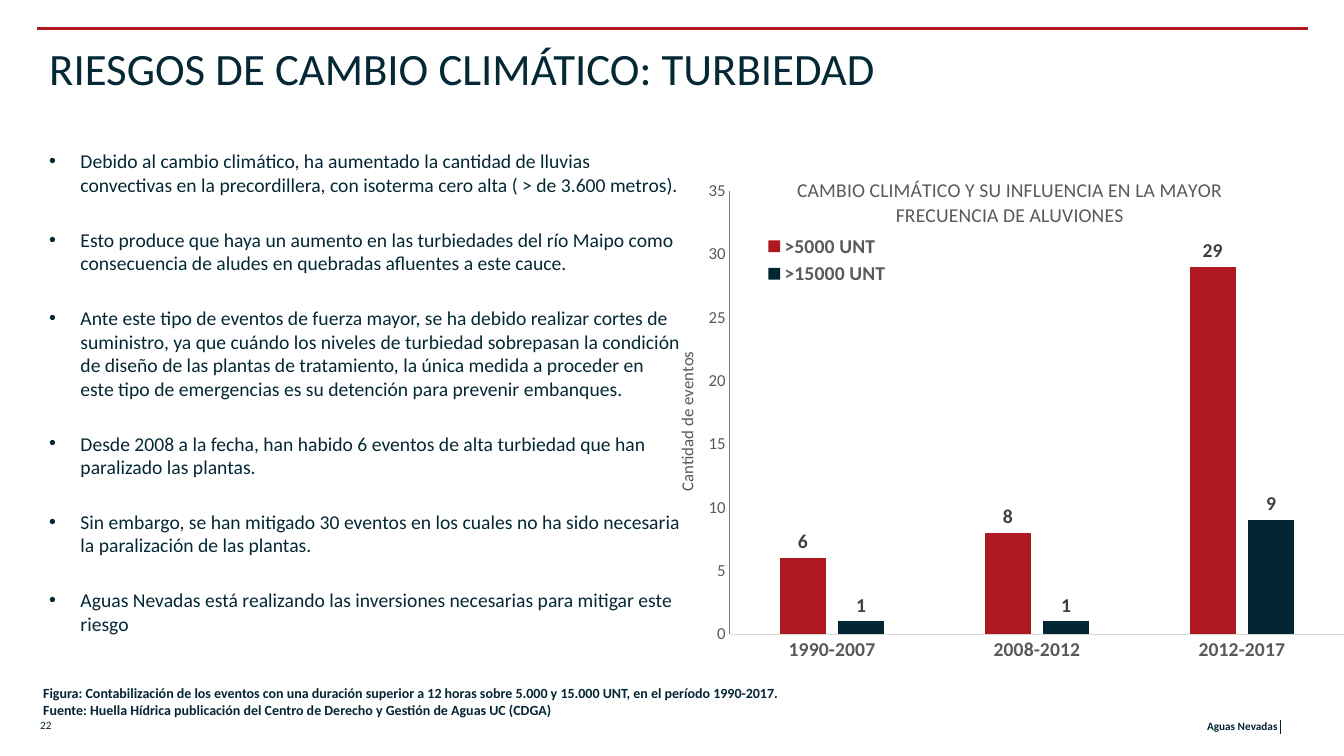
from lxml import etree
from pptx import Presentation
from pptx.chart.data import CategoryChartData
from pptx.dml.color import RGBColor
from pptx.enum.chart import XL_CHART_TYPE, XL_LABEL_POSITION, XL_LEGEND_POSITION, XL_TICK_MARK
from pptx.enum.shapes import MSO_CONNECTOR
from pptx.enum.text import MSO_ANCHOR, PP_ALIGN
from pptx.oxml.ns import qn
from pptx.util import Inches, Pt

COLUMNS = XL_CHART_TYPE.COLUMN_CLUSTERED
OUTSIDE_END = XL_LABEL_POSITION.OUTSIDE_END
LEGEND_BOTTOM = XL_LEGEND_POSITION.BOTTOM
NO_TICK = XL_TICK_MARK.NONE
STRAIGHT = MSO_CONNECTOR.STRAIGHT
TOP, MIDDLE = MSO_ANCHOR.TOP, MSO_ANCHOR.MIDDLE
LEFT, RIGHT = PP_ALIGN.LEFT, PP_ALIGN.RIGHT

# Content
FONT = "Calibri"
COLORS = {"ink": "042834", "navy": "042534", "red": "AE1920", "gray": "595959",
          "label": "404040", "baseline": "D9D9D9", "axis": "808080"}
TITLE = "RIESGOS DE CAMBIO CLIMÁTICO: TURBIEDAD"
BULLETS = [
    "Debido al cambio climático, ha aumentado la cantidad de lluvias convectivas en la "
    "precordillera, con isoterma cero alta ( > de 3.600 metros).",
    "Esto produce que haya un aumento en las turbiedades del río Maipo como consecuencia "
    "de aludes en quebradas afluentes a este cauce.",
    "Ante este tipo de eventos de fuerza mayor, se ha debido realizar cortes de suministro, "
    "ya que cuándo los niveles de turbiedad sobrepasan la condición de diseño de las plantas "
    "de tratamiento, la única medida a proceder en este tipo de emergencias es su detención "
    "para prevenir embanques.",
    "Desde 2008 a la fecha, han habido 6 eventos de alta turbiedad que han paralizado las plantas.",
    "Sin embargo, se han mitigado 30 eventos en los cuales no ha sido necesaria la "
    "paralización de las plantas.",
    "Aguas Nevadas está realizando las inversiones necesarias para mitigar este riesgo",
]
CAPTION = [
    "Figura: Contabilización de los eventos con una duración superior a 12 horas sobre 5.000 "
    "y 15.000 UNT, en el período 1990-2017.",
    "Fuente: Huella Hídrica publicación del Centro de Derecho y Gestión de Aguas UC (CDGA)",
]
CHART_TITLE = "CAMBIO CLIMÁTICO Y SU INFLUENCIA EN LA MAYOR FRECUENCIA DE ALUVIONES"
AXIS_TITLE = "Cantidad de eventos"
PERIODS = ["1990-2007", "2008-2012", "2012-2017"]
SERIES = [(">5000 UNT", (6, 8, 29), "red"), (">15000 UNT", (1, 1, 9), "navy")]

# Box, lines, format, vertical anchor, alignment
TEXTS = [
    ((0.39, 0.31, 12.57, 0.72), [TITLE], {"size": 32, "color": "ink"}, MIDDLE, LEFT),
    ((0.33, 6.74, 8.16, 0.44), CAPTION, {"size": 10, "color": "navy", "bold": True}, TOP, LEFT),
    ((0.3, 7.04, 2.25, 0.3), ["22"], {"size": 8, "color": "navy"}, MIDDLE, LEFT),
    ((10.52, 7.05, 2.25, 0.3), ["Aguas Nevadas"],
     {"size": 8, "color": "navy", "bold": True}, MIDDLE, RIGHT),
]
# Start, end, color, width
RULES = [((0.37, 0.28), (12.97, 0.28), "red", 2), ((12.7, 7.14), (12.7, 7.28), "navy", 0.5)]


def rgb(name):
    return RGBColor.from_string(COLORS[name])


def set_font(font, size, color, bold=False):
    for name, value in {"name": FONT, "size": Pt(size), "bold": bold}.items():
        setattr(font, name, value)
    font.color.rgb = rgb(color)


def add_text(slide, box, lines, style, anchor=TOP, align=LEFT):
    frame = slide.shapes.add_textbox(*map(Inches, box)).text_frame
    frame.word_wrap = True
    frame.vertical_anchor = anchor
    frame.text = "\n".join(lines)
    for paragraph in frame.paragraphs:
        paragraph.alignment = align
        set_font(paragraph.runs[0].font, **style)
    return frame


def add_bullets(frame, indent, gap):
    for index, paragraph in enumerate(frame.paragraphs):
        properties = paragraph._p.get_or_add_pPr()
        properties.set("marL", str(Inches(indent)))
        properties.set("indent", str(-Inches(indent)))
        if index:
            paragraph.space_before = Pt(gap)
        etree.SubElement(properties, qn("a:buFont"), typeface="Arial")
        etree.SubElement(properties, qn("a:buChar"), char="•")


def place(parent, position, before=None):
    """Give a chart part a manual layout as fractions of the chart."""
    for old in parent.findall(qn("c:layout")):
        parent.remove(old)
    layout = etree.Element(qn("c:layout"))
    manual = etree.SubElement(layout, qn("c:manualLayout"))
    for tag, value in position.items():
        etree.SubElement(manual, qn("c:" + tag), val=str(value))
    following = parent.find(qn(before)) if before else None
    if following is None:
        parent.insert(0, layout)
    else:
        following.addprevious(layout)


def add_events_chart(slide):
    data = CategoryChartData()
    data.categories = PERIODS
    for name, values, _ in SERIES:
        data.add_series(name, values)
    box = map(Inches, (6.67, 1.51, 6.67, 5.22))
    chart = slide.shapes.add_chart(COLUMNS, *box, data).chart
    set_font(chart.font, 10, "gray")

    # Columns and value labels
    plot = chart.plots[0]
    plot.vary_by_categories = False
    plot.gap_width, plot.overlap = 219, -27
    for series, (_, _, color) in zip(plot.series, SERIES):
        series.format.fill.solid()
        series.format.fill.fore_color.rgb = rgb(color)
        labels = series.data_labels
        labels.show_value = True
        labels.position = OUTSIDE_END
        set_font(labels.font, 14, "label", True)

    # Axes
    for axis, size, bold, line in ((chart.category_axis, 14, True, "baseline"),
                                   (chart.value_axis, 12, False, "axis")):
        axis.major_tick_mark = axis.minor_tick_mark = NO_TICK
        axis.has_major_gridlines = False
        set_font(axis.tick_labels.font, size, "gray", bold)
        axis.format.line.color.rgb = rgb(line)
        axis.format.line.width = Pt(0.75)
    value_axis = chart.value_axis
    value_axis.minimum_scale, value_axis.maximum_scale, value_axis.major_unit = 0, 35, 5

    # Titles
    for title, text, size in ((chart.chart_title, CHART_TITLE, 14),
                              (value_axis.axis_title, AXIS_TITLE, 12)):
        title.text_frame.text = text
        set_font(title.text_frame.paragraphs[0].runs[0].font, size, "gray")
    value_axis.axis_title.text_frame._txBody.bodyPr.set("rot", "-5400000")
    chart.chart_title.include_in_layout = True
    chart.has_legend = True
    chart.legend.position = LEGEND_BOTTOM
    chart.legend.include_in_layout = True
    set_font(chart.legend.font, 14, "gray", True)

    # Layout inside the chart
    edges = {"xMode": "edge", "yMode": "edge"}
    place(chart._chartSpace.chart.plotArea,
          {"layoutTarget": "inner", **edges, "x": 0.085, "y": 0.073, "w": 0.915, "h": 0.843})
    place(chart.chart_title._element, {**edges, "x": 0.18, "y": 0.04}, "c:overlay")
    place(chart.legend._element,
          {**edges, "x": 0.13, "y": 0.15, "w": 0.2, "h": 0.11}, "c:overlay")


def main():
    presentation = Presentation()
    presentation.slide_width, presentation.slide_height = Inches(13.33), Inches(7.5)
    slide = presentation.slides.add_slide(presentation.slide_layouts[6])

    # Rules
    for start, end, color, width in RULES:
        rule = slide.shapes.add_connector(STRAIGHT, *map(Inches, start + end))
        rule.line.color.rgb = rgb(color)
        rule.line.width = Pt(width)
        etree.SubElement(rule._element.spPr, qn("a:effectLst"))

    # Texts and chart
    for text in TEXTS:
        add_text(slide, *text)
    body = add_text(slide, (0.39, 1.43, 6.46, 5.28), BULLETS, {"size": 14, "color": "ink"})
    add_bullets(body, indent=0.31, gap=22.4)
    add_events_chart(slide)
    presentation.save("out.pptx")


if __name__ == "__main__":
    main()
